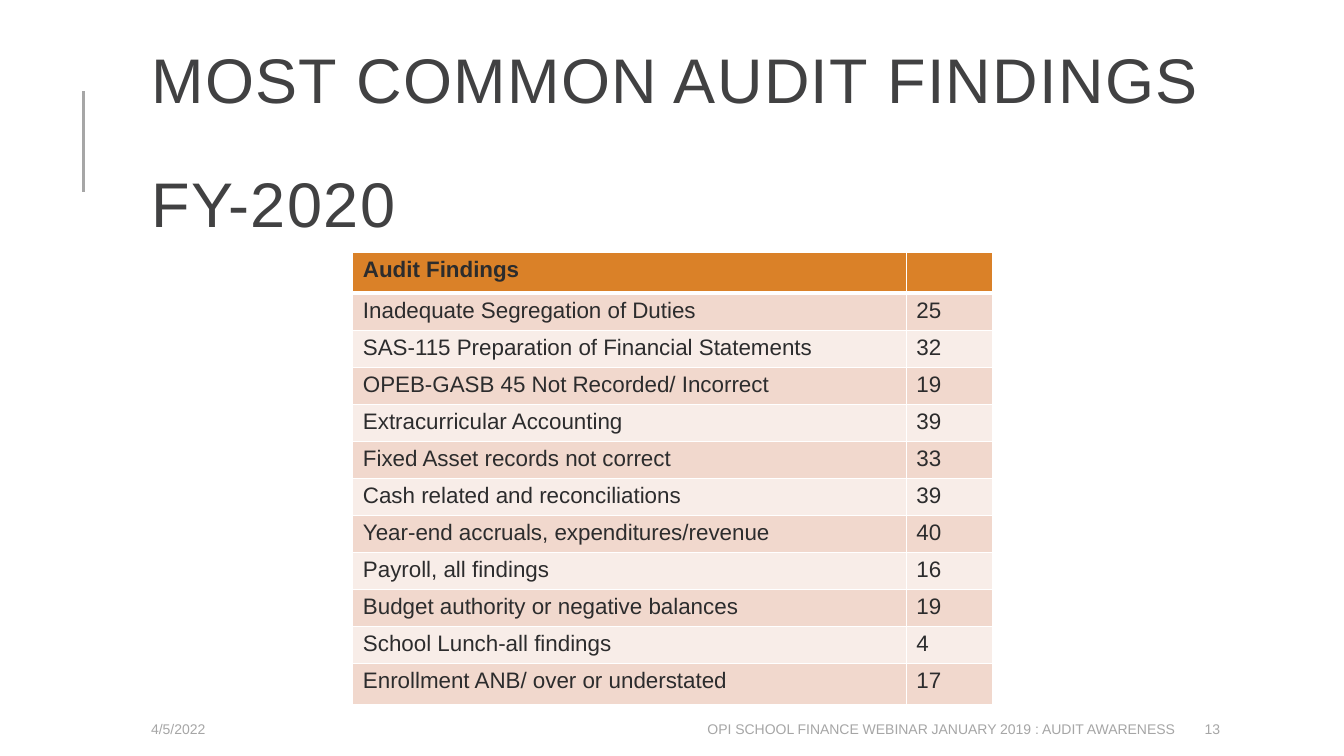
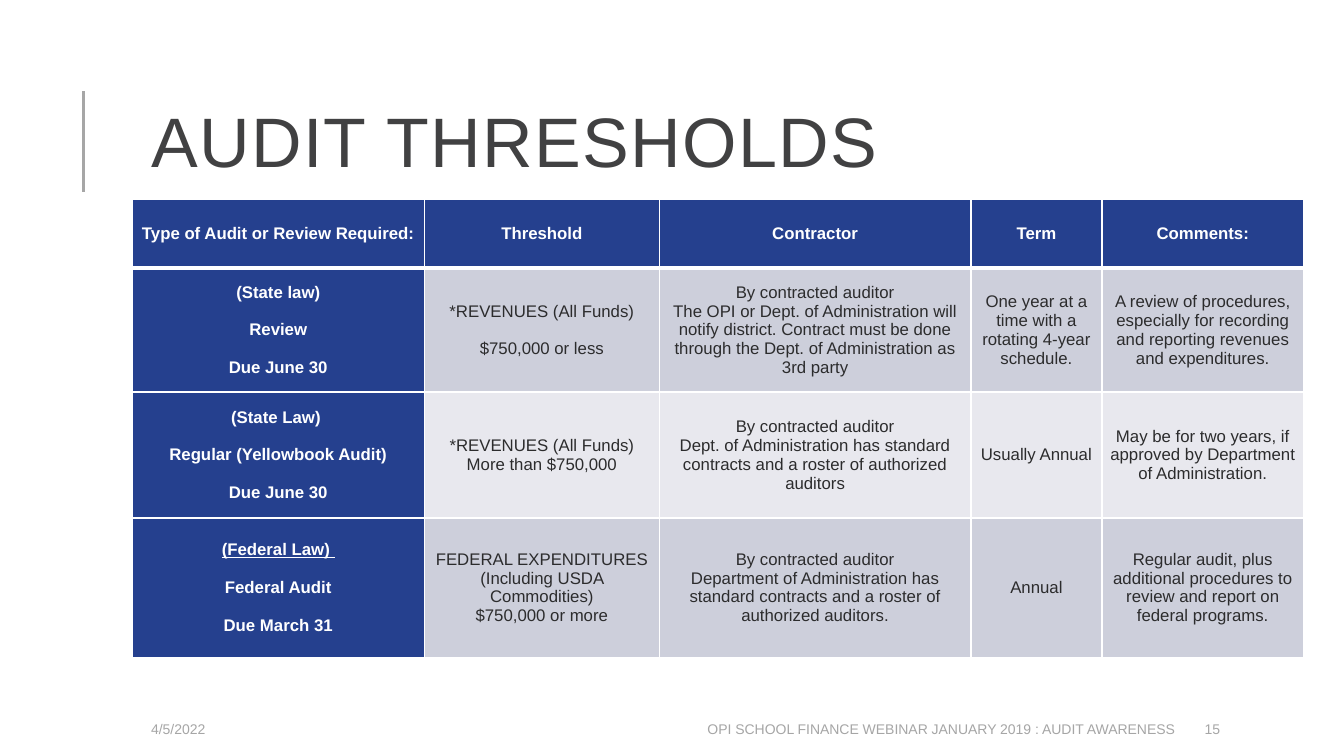
from pptx import Presentation
from pptx.dml.color import RGBColor
from pptx.enum.shapes import MSO_CONNECTOR
from pptx.enum.text import MSO_ANCHOR, MSO_AUTO_SIZE, PP_ALIGN
from pptx.oxml.ns import qn
from pptx.util import Inches, Pt
from lxml.etree import SubElement

WHITE = RGBColor(0xFF, 0xFF, 0xFF)
GRAY = RGBColor(0xA6, 0xA6, 0xA6)
SLATE = RGBColor(0x41, 0x41, 0x42)
INK = RGBColor(0x2C, 0x2C, 0x2D)
ORANGE = RGBColor(0xDA, 0x81, 0x28)
PEACH = RGBColor(0xF1, 0xD8, 0xCD)
CREAM = RGBColor(0xF8, 0xED, 0xE8)
BLUE = RGBColor(0x25, 0x40, 0x8E)
STEEL = RGBColor(0xCD, 0xCF, 0xDB)
MIST = RGBColor(0xE8, 0xE8, 0xEE)

LEFT, CENTER, RIGHT = PP_ALIGN.LEFT, PP_ALIGN.CENTER, PP_ALIGN.RIGHT
FONT = "Arial"
FOOT = "OPI SCHOOL FINANCE WEBINAR JANUARY 2019 : AUDIT AWARENESS"


def grid(*steps):
    """Turn grid steps of a tenth of an inch into lengths."""
    return [Inches(step / 10) for step in steps]


def write(frame, text, size=12, color=INK, bold=False, align=LEFT,
          gap=0, lead=None, track=None):
    """Write each line of text as a paragraph, with gap points between."""
    for num, line in enumerate(text.split("\n")):
        para = frame.add_paragraph() if num else frame.paragraphs[0]
        para.alignment = align
        para.space_before = Pt(gap if num else 0)
        if lead:
            para.line_spacing = lead
        run = para.add_run()
        run.text = line
        font = run.font
        font.name, font.size, font.bold = FONT, Pt(size), bold
        font.color.rgb = color
        if track:
            run._r.get_or_add_rPr().set("spc", str(track * 100))


def edge(cell, top, base):
    """Draw the white borders of a cell; top and base are in points."""
    props = cell._tc.get_or_add_tcPr()
    for tag, width in (("lnL", 1), ("lnR", 1), ("lnT", top), ("lnB", base)):
        line = SubElement(props, qn("a:" + tag), w=str(Pt(width)))
        fill = SubElement(line, qn("a:solidFill"))
        SubElement(fill, qn("a:srgbClr"), val=str(WHITE))


class Deck:
    """Holds the shared style and the current slide."""

    def __init__(self):
        self.prs = Presentation()
        self.prs.slide_width, self.prs.slide_height = Inches(13.33), Inches(7.5)

    def page(self, title, size, num):
        layout = self.prs.slide_layouts.get_by_name("Title Only")
        self.slide = self.prs.slides.add_slide(layout)
        self.rule()
        self.title(title, size)
        self.label("4/5/2022", 14, 23.6)
        self.label(FOOT, 53, 64.5, RIGHT)
        self.label(str(num), 118.5, 10.6)

    def rule(self):
        line = self.slide.shapes.add_connector(
            MSO_CONNECTOR.STRAIGHT, *grid(8.3, 19, 8.3, 9))
        line.line.color.rgb, line.line.width = GRAY, Pt(1.75)
        SubElement(line._element.spPr, qn("a:effectLst"))

    def title(self, text, size):
        head = self.slide.shapes.title
        head.left, head.top, head.width, head.height = grid(14, 6.4, 106.3, 16.4)
        frame = head.text_frame
        frame.auto_size, frame.word_wrap = MSO_AUTO_SIZE.NONE, True
        frame.vertical_anchor = MSO_ANCHOR.MIDDLE
        write(frame, text, size, SLATE, gap=size, lead=0.8, track=1)

    def label(self, text, col, wide, align=LEFT):
        box = self.slide.shapes.add_textbox(*grid(col, 70.8, wide, 3))
        frame = box.text_frame
        frame.word_wrap, frame.vertical_anchor = True, MSO_ANCHOR.MIDDLE
        write(frame, text, 10, GRAY, align=align)

    def table(self, spot, cols, rows, data, style):
        """Build a table; style(row, col, cell, text) formats each cell."""
        shape = self.slide.shapes.add_table(
            len(rows), len(cols), *grid(*spot, sum(cols), sum(rows)))
        table = shape.table
        for part, size in zip(table.columns, grid(*cols)):
            part.width = size
        for part, size in zip(table.rows, grid(*rows)):
            part.height = size
        for row, texts in enumerate(data):
            for col, text in enumerate(texts):
                cell = table.cell(row, col)
                edge(cell, 3 if row == 1 else 1, 1 if row else 3)
                cell.fill.solid()
                style(row, col, cell, text)
        return table


def count(row, col, cell, text):
    """Format a cell of the findings table."""
    band = PEACH if row % 2 else CREAM
    cell.fill.fore_color.rgb = band if row else ORANGE
    if text:
        write(cell.text_frame, text, 16, bold=not row)


def term(row, col, cell, text):
    """Format a cell of the thresholds table."""
    head = not row or not col
    band = STEEL if row % 2 else MIST
    cell.fill.fore_color.rgb = BLUE if head else band
    cell.margin_left = cell.margin_right = Inches(0.07)
    cell.margin_top = cell.margin_bottom = 0
    cell.vertical_anchor = MSO_ANCHOR.MIDDLE
    write(cell.text_frame, text, color=WHITE if head else INK, bold=head,
          align=CENTER, gap=13.5 if not col or (row, col) == (1, 1) else 0)


FINDS = [
    ("Audit Findings", ""),
    ("Inadequate Segregation of Duties", "25"),
    ("SAS-115 Preparation of Financial Statements", "32"),
    ("OPEB-GASB 45 Not Recorded/ Incorrect", "19"),
    ("Extracurricular Accounting", "39"),
    ("Fixed Asset records not correct", "33"),
    ("Cash related and reconciliations", "39"),
    ("Year-end accruals, expenditures/revenue", "40"),
    ("Payroll, all findings", "16"),
    ("Budget authority or negative balances", "19"),
    ("School Lunch-all findings", "4"),
    ("Enrollment ANB/ over or understated", "17"),
]

TERMS = [
    ("Type of Audit or Review Required:", "Threshold", "Contractor", "Term",
     "Comments:"),
    ("(State law)\nReview\nDue June 30",
     "*REVENUES (All Funds)\n$750,000 or less",
     "By contracted auditor\nThe OPI or Dept. of Administration will notify "
     "district. Contract must be done through the Dept. of Administration as "
     "3rd party",
     "One year at a time with a rotating 4-year schedule.",
     "A review of procedures, especially for recording and reporting revenues "
     "and expenditures."),
    ("(State Law) \nRegular (Yellowbook Audit)\nDue June 30",
     "*REVENUES (All Funds) More than $750,000",
     "By contracted auditor\nDept. of Administration has standard contracts "
     "and a roster of authorized auditors",
     "Usually Annual",
     "May be for two years, if approved by Department of Administration."),
    ("(Federal Law) \nFederal Audit\nDue March 31",
     "FEDERAL EXPENDITURES (Including USDA Commodities)\n$750,000 or more",
     "By contracted auditor\nDepartment of Administration has standard "
     "contracts and a roster of authorized auditors.",
     "Annual",
     "Regular audit, plus additional procedures to review and report on "
     "federal programs."),
]


def main():
    deck = Deck()
    deck.page("MOST COMMON AUDIT FINDINGS\nFY-2020", 45, 13)
    deck.table((35, 25), (54.9, 8.5), (4.1, *[3.5] * 10, 4.1), FINDS, count)

    deck.page("AUDIT THRESHOLDS", 50, 15)
    table = deck.table((13.1, 19.8), (29, 23.3, 30.9, 13, 20),
                       (6.8, 12.3, 12.5, 13.8), TERMS, term)
    law = table.cell(3, 0).text_frame.paragraphs[0].runs[0]
    law.font.underline = True
    deck.prs.save("out.pptx")


if __name__ == "__main__":
    main()
